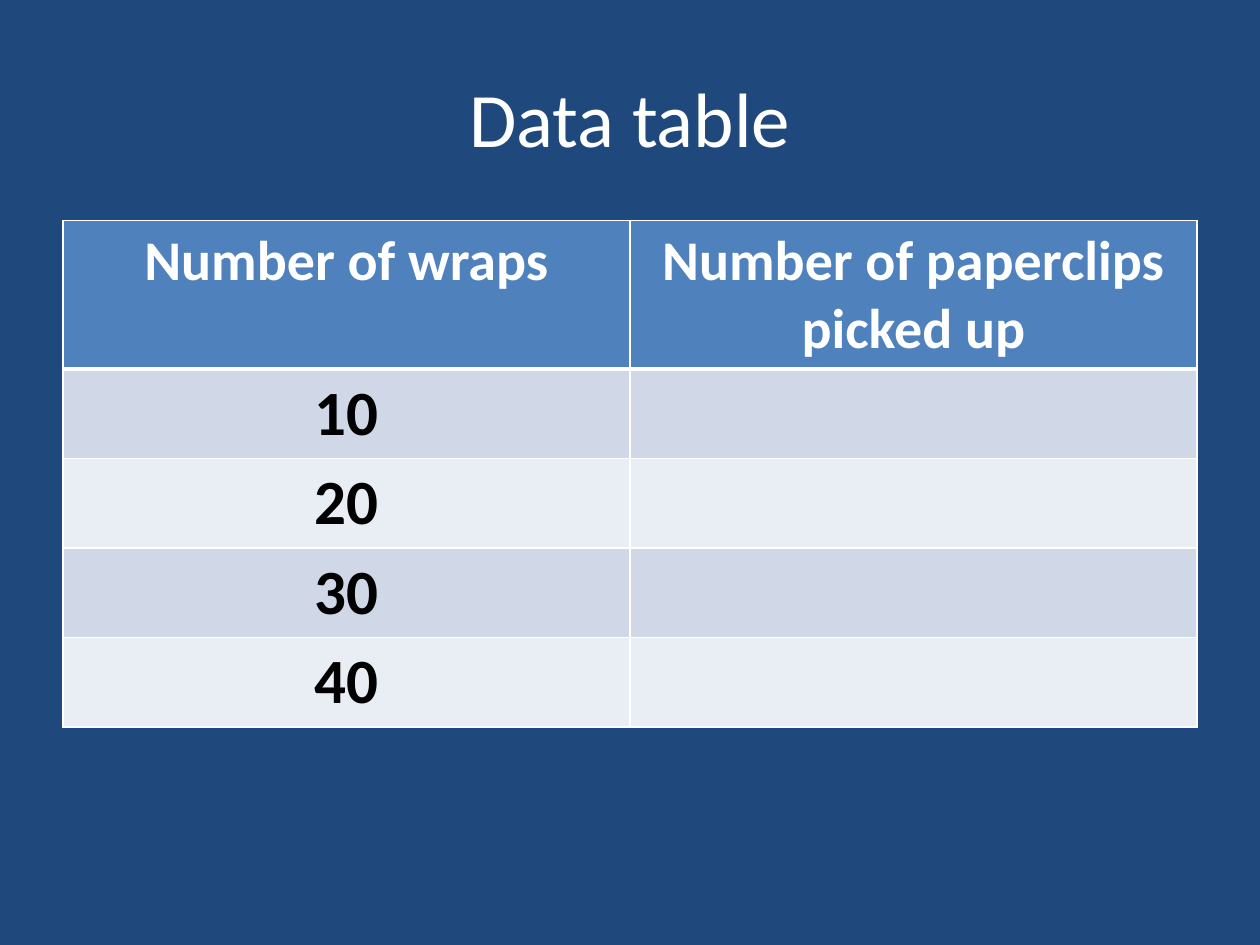
import pptx
import pptx.util
import pptx.dml.color
import pptx.enum.text
import pptx.oxml
import pptx.oxml.ns

Inches, Pt = pptx.util.Inches, pptx.util.Pt
RGB = pptx.dml.color.RGBColor.from_string

TITLE = "Data table"
ROWS = [
    ("Number of wraps", "Number of paperclips picked up"),
    ("10", ""),
    ("20", ""),
    ("30", ""),
    ("40", ""),
]
THEME = {
    "font": "Calibri",
    "background": "1F497D",
    "light": "FFFFFF",
    "dark": "000000",
    "header": "4F81BD",
    "bands": ("D0D8E8", "E9EDF4"),
    "title_size": 44,
    "header_size": 32,
    "body_size": 36,
    "rule": 1,
    "header_rule": 3,
}
HEADER_HEIGHT, BODY_HEIGHT = 1.18, 0.71
MARGIN, CONTENT_WIDTH = 0.5, 9


def write(frame, wording, size, color, bold):
    paragraph = frame.paragraphs[0]
    paragraph.alignment = pptx.enum.text.PP_ALIGN.CENTER
    if not wording:
        return
    run = paragraph.add_run()
    run.text = wording
    formats = {"name": THEME["font"], "size": Pt(size), "bold": bold}
    for key, value in formats.items():
        setattr(run.font, key, value)
    run.font.color.rgb = RGB(color)


def rule_cell(cell, widths):
    properties = cell._tc.get_or_add_tcPr()
    for side, width in widths.items():
        properties.append(pptx.oxml.parse_xml(
            f'<a:ln{side} {pptx.oxml.ns.nsdecls("a")} w="{Pt(width)}">'
            f'<a:solidFill><a:srgbClr val="{THEME["light"]}"/></a:solidFill>'
            f'</a:ln{side}>'))


def add_title(slide):
    heading = slide.shapes.add_textbox(
        Inches(MARGIN), Inches(0.3), Inches(CONTENT_WIDTH), Inches(1.25))
    frame = heading.text_frame
    frame.word_wrap = True
    frame.vertical_anchor = pptx.enum.text.MSO_ANCHOR.MIDDLE
    write(frame, TITLE, THEME["title_size"], THEME["light"], False)


def add_data_table(slide):
    heights = [HEADER_HEIGHT] + [BODY_HEIGHT] * (len(ROWS) - 1)
    columns = len(ROWS[0])
    results = slide.shapes.add_table(
        len(ROWS), columns, Inches(MARGIN), Inches(1.75),
        Inches(CONTENT_WIDTH), Inches(sum(heights))).table
    for column in results.columns:
        column.width = Inches(CONTENT_WIDTH / columns)
    for index, (entries, height) in enumerate(zip(ROWS, heights)):
        results.rows[index].height = Inches(height)
        is_header = index == 0
        kind = "header" if is_header else "body"
        fill = THEME["header"] if is_header else THEME["bands"][(index - 1) % 2]
        color = THEME["light"] if is_header else THEME["dark"]
        widths = dict.fromkeys("LRTB", THEME["rule"])
        if index < 2:
            widths["B" if is_header else "T"] = THEME["header_rule"]
        for position, entry in enumerate(entries):
            cell = results.cell(index, position)
            rule_cell(cell, widths)
            cell.fill.solid()
            cell.fill.fore_color.rgb = RGB(fill)
            write(cell.text_frame, entry, THEME[f"{kind}_size"], color, True)


def main():
    """Build the slide with its title and the table for recording results."""
    deck = pptx.Presentation()
    deck.slide_width, deck.slide_height = Inches(10), Inches(7.5)
    slide = deck.slides.add_slide(deck.slide_layouts[6])
    slide.background.fill.solid()
    slide.background.fill.fore_color.rgb = RGB(THEME["background"])
    add_title(slide)
    add_data_table(slide)
    deck.save("out.pptx")


if __name__ == "__main__":
    main()
